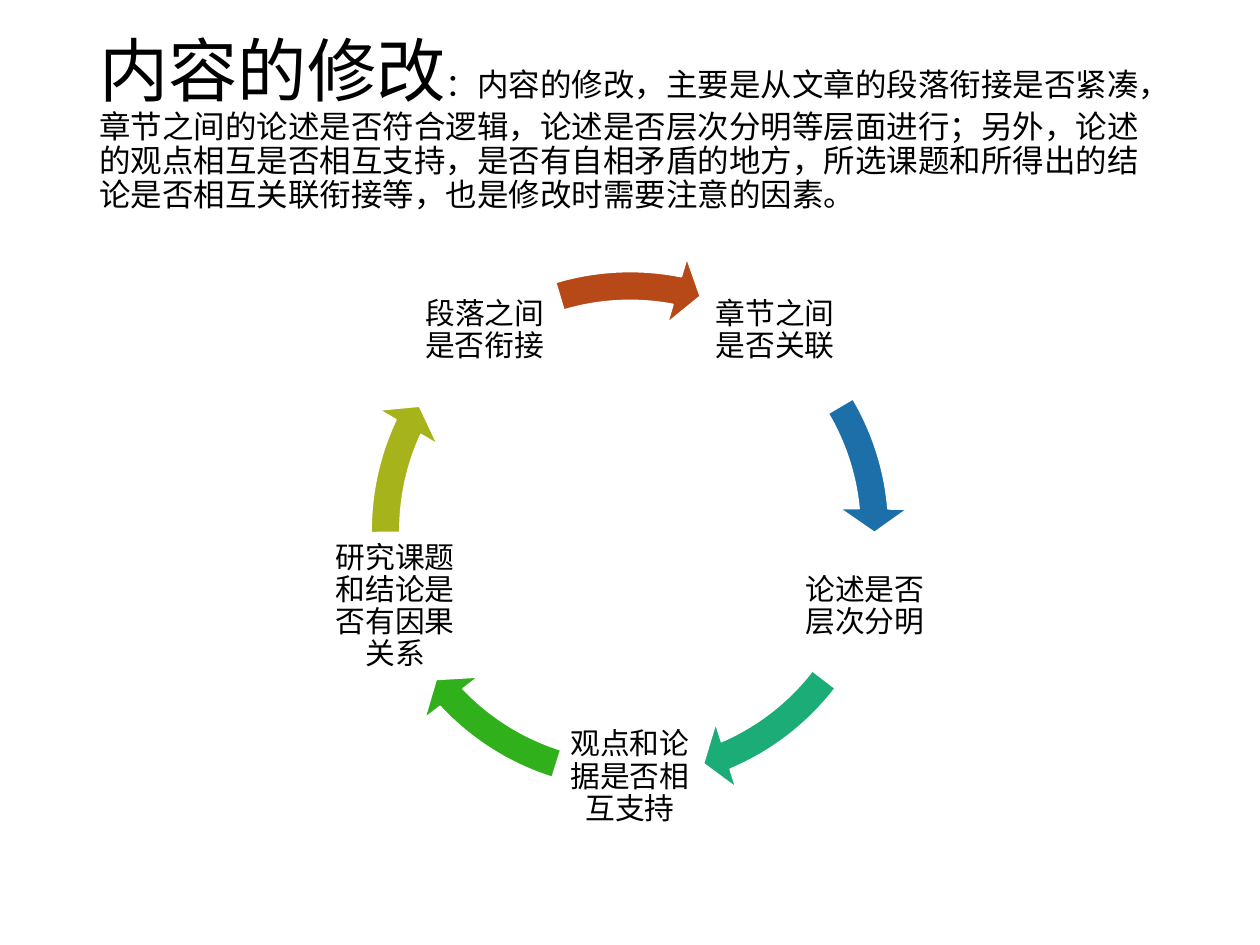
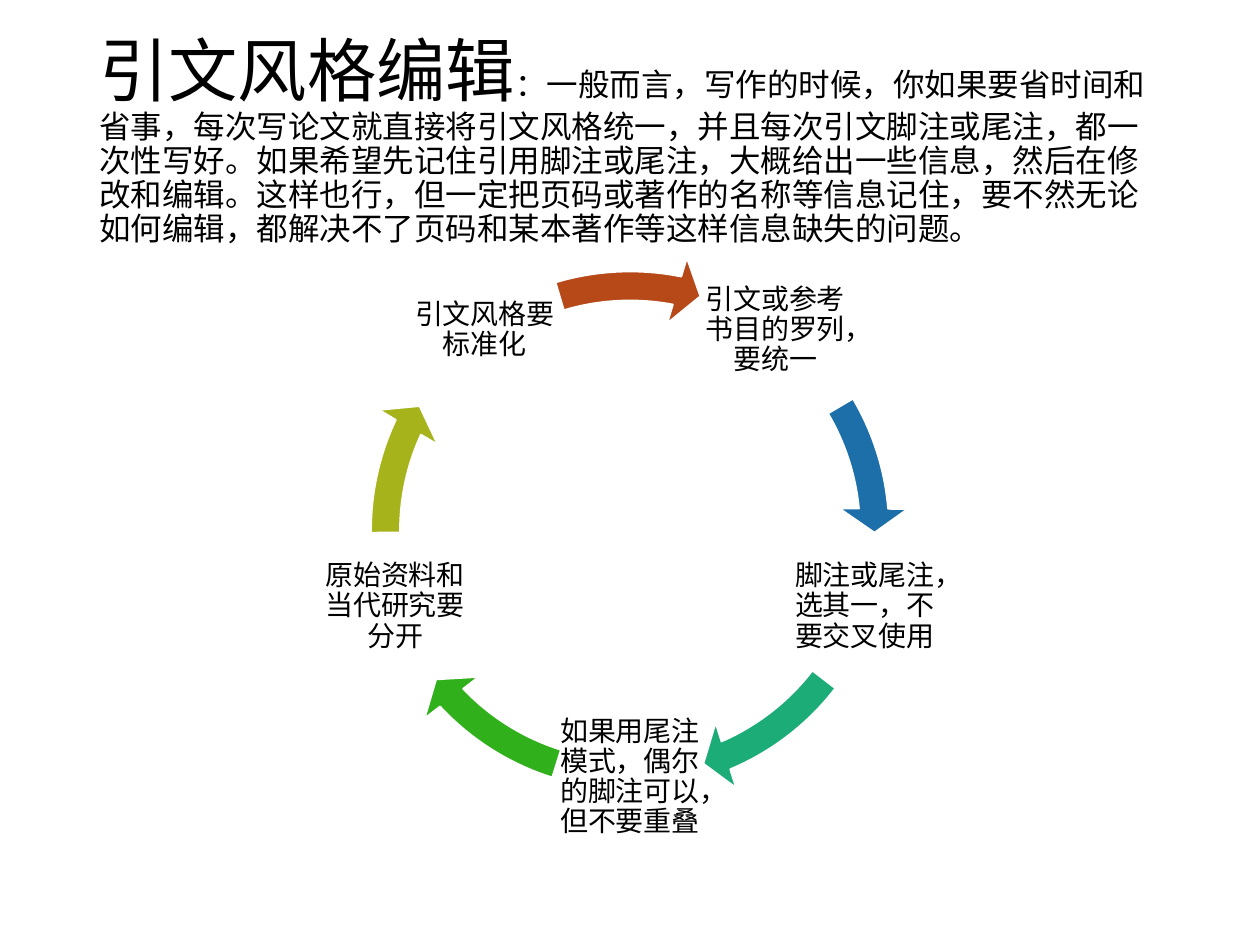
"""Builds two slides, each with a lead text above a five-step cycle."""
from math import cos, radians, sin

from pptx import Presentation
from pptx.dml.color import RGBColor
from pptx.enum.shapes import MSO_SHAPE
from pptx.enum.text import MSO_ANCHOR, PP_ALIGN
from pptx.util import Inches, Pt

CIRCULAR_ARROW = MSO_SHAPE.CIRCULAR_ARROW
MIDDLE = MSO_ANCHOR.MIDDLE
CENTER = PP_ALIGN.CENTER
LEFT = PP_ALIGN.LEFT

SLIDES = [
    {
        "heading": "内容的修改",
        "lead": "：内容的修改，主要是从文章的段落衔接是否紧凑，章节之间的论述是否符合逻辑，"
                "论述是否层次分明等层面进行；另外，论述的观点相互是否相互支持，"
                "是否有自相矛盾的地方，所选课题和所得出的结论是否相互关联衔接等，"
                "也是修改时需要注意的因素。",
        "bottom_inset": 0.32,
        "step_size": 17,
        "steps": ["章节之间是否关联", "论述是否层次分明", "观点和论据是否相互支持",
                  "研究课题和结论是否有因果关系", "段落之间是否衔接"],
    },
    {
        "heading": "引文风格编辑",
        "lead": "：一般而言，写作的时候，你如果要省时间和省事，每次写论文就直接将引文风格统一，"
                "并且每次引文脚注或尾注，都一次性写好。如果希望先记住引用脚注或尾注，"
                "大概给出一些信息，然后在修改和编辑。这样也行，"
                "但一定把页码或著作的名称等信息记住，要不然无论如何编辑，"
                "都解决不了页码和某本著作等这样信息缺失的问题。",
        "bottom_inset": 0.05,
        "step_size": 16,
        "steps": ["引文或参考书目的罗列，要统一", "脚注或尾注，选其一，不要交叉使用",
                  "如果用尾注模式，偶尔的脚注可以，但不要重叠",
                  "原始资料和当代研究要分开", "引文风格要标准化"],
    },
]

COLORS = {"text": "000000", "outline": "FFFFFF", "blue": "1D6FA9", "teal": "1CAC78",
          "green": "30B01B", "olive": "A7B31A", "rust": "B74919"}
ARROWS = [("blue", 329.43, 354.9), ("teal", 37.55, 66.92), ("green", 107.48, 136.86),
          ("olive", 179.51, 204.98), ("rust", 253.3, 281.11)]

FONT = "Times New Roman"
HEADING_SIZE, LEAD_SIZE = 39.6, 18
TITLE_BOX = (0.69, 0.4, 8.62, 1.45)
CENTER_X, CENTER_Y = 5, 4.21
STEP_RADIUS, STEP_SIDE, STEP_INSET = 1.96, 1.18, 0.02
FIRST_ANGLE = -54
RING_SIDE = 4.42
BAND_WIDTH, HEAD_ANGLE, HEAD_WIDTH = 0.052, 5.6, 0.061
ADJUSTMENT_PER_DEGREE = 0.6


def color(name):
    return RGBColor.from_string(COLORS[name])


def square(x, y, side):
    return [Inches(value) for value in (x - side / 2, y - side / 2, side, side)]


def add_text(shapes, box, pieces, alignment, insets):
    text_frame = shapes.add_textbox(*box).text_frame
    text_frame.word_wrap = True
    text_frame.vertical_anchor = MIDDLE
    (text_frame.margin_left, text_frame.margin_top,
     text_frame.margin_right, text_frame.margin_bottom) = map(Inches, insets)
    paragraph = text_frame.paragraphs[0]
    paragraph.alignment = alignment
    paragraph.line_spacing = 0.9
    for text, size in pieces:
        run = paragraph.add_run()
        run.text = text
        run.font.name = FONT
        run.font.size = Pt(size)
        run.font.color.rgb = color("text")


def add_arrow(shapes, fill, start, end):
    arrow = shapes.add_shape(CIRCULAR_ARROW, *square(CENTER_X, CENTER_Y, RING_SIDE))
    arrow.shadow.inherit = False
    angles = [degrees * ADJUSTMENT_PER_DEGREE for degrees in (HEAD_ANGLE, end, start)]
    for index, value in enumerate([BAND_WIDTH, *angles, HEAD_WIDTH]):
        arrow.adjustments[index] = value
    arrow.fill.solid()
    arrow.fill.fore_color.rgb = color(fill)
    arrow.line.color.rgb = color("outline")
    arrow.line.width = Pt(1)


def add_cycle(slide, steps, size):
    cycle = slide.shapes.add_group_shape().shapes
    for index, (step, arrow) in enumerate(zip(steps, ARROWS)):
        angle = radians(FIRST_ANGLE + index * 360 / len(steps))
        box = square(CENTER_X + STEP_RADIUS * cos(angle),
                     CENTER_Y + STEP_RADIUS * sin(angle), STEP_SIDE)
        add_text(cycle, box, [(step, size)], CENTER, [STEP_INSET] * 4)
        add_arrow(cycle, *arrow)


def main():
    presentation = Presentation()
    presentation.slide_width, presentation.slide_height = Inches(10), Inches(7.5)
    for content in SLIDES:
        slide = presentation.slides.add_slide(presentation.slide_layouts[6])
        pieces = [(content["heading"], HEADING_SIZE), (content["lead"], LEAD_SIZE)]
        add_text(slide.shapes, map(Inches, TITLE_BOX), pieces, LEFT,
                 (0.1, 0.05, 0.1, content["bottom_inset"]))
        add_cycle(slide, content["steps"], content["step_size"])
    presentation.save("out.pptx")


if __name__ == "__main__":
    main()
